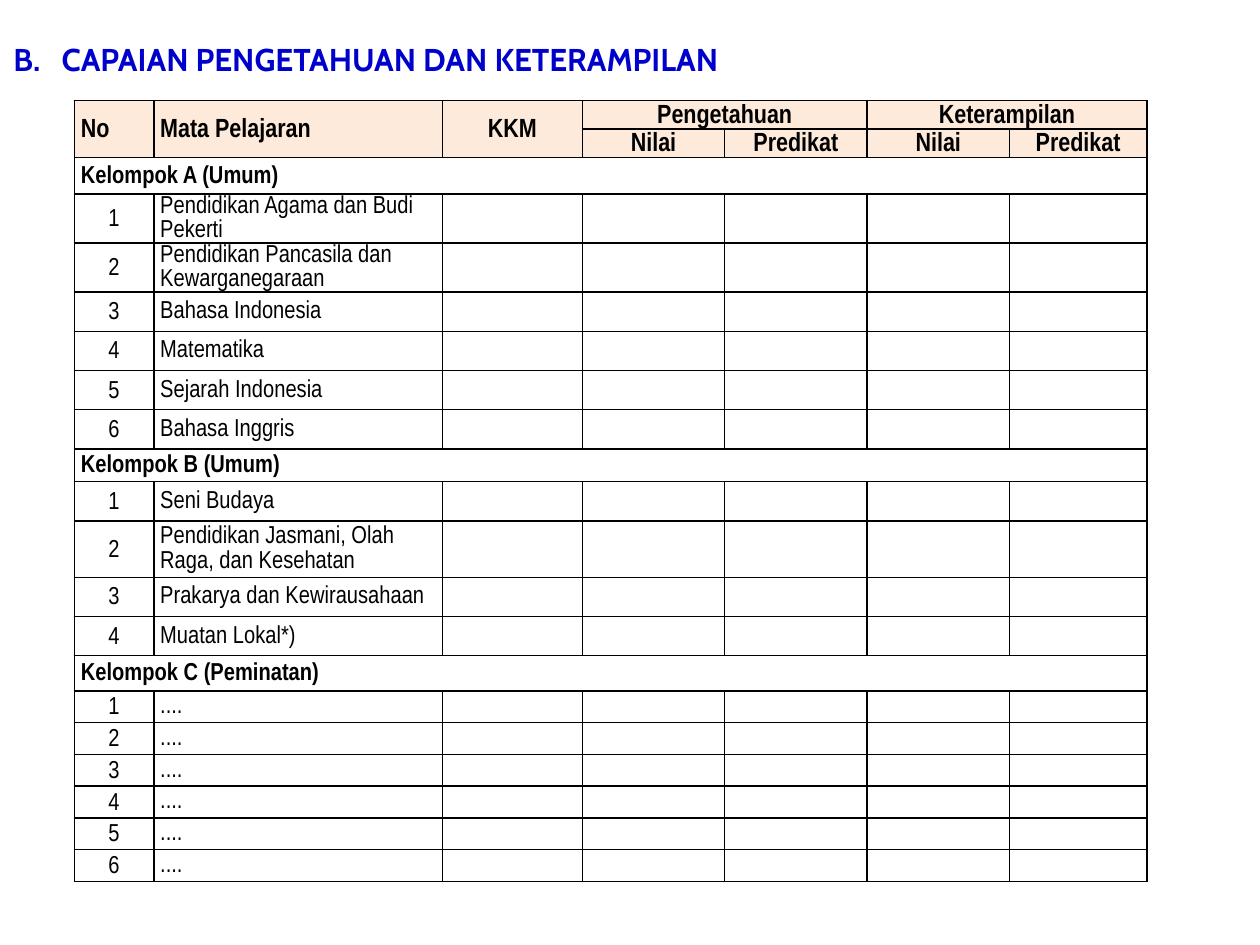
from lxml.etree import SubElement
from pptx import Presentation
from pptx.dml.color import RGBColor
from pptx.enum.shapes import MSO_SHAPE
from pptx.enum.text import MSO_ANCHOR, PP_ALIGN
from pptx.oxml.ns import qn
from pptx.util import Cm, Pt

BLACK = RGBColor(0x00, 0x00, 0x00)
BLUE = RGBColor(0x00, 0x00, 0xCC)
PEACH = RGBColor(0xFD, 0xEA, 0xDA)
FONT = "Arial Narrow"
TITLE_FONT = "Cabin"

COLUMNS = [1.6, 5.82, 2.82, 2.87, 2.87, 2.87, 2.77]
HEADER_HEIGHT = 0.43
ROW = 0.79
TALL_ROW = 1.14
SHORT_ROW = 0.64
HEADERS = [
    ["No", "Mata Pelajaran", "KKM", "Pengetahuan", "", "Keterampilan", ""],
    ["", "", "", "Nilai", "Predikat", "Nilai", "Predikat"],
]
GROUPS = [
    ("Kelompok A (Umum)", 0.74, 1.15, [
        ("Pendidikan Agama dan Budi Pekerti", ROW),
        ("Pendidikan Pancasila dan Kewarganegaraan", ROW),
        ("Bahasa Indonesia", ROW),
        ("Matematika", ROW),
        ("Sejarah Indonesia", ROW),
        ("Bahasa Inggris", ROW),
    ]),
    ("Kelompok B (Umum)", 0.66, Pt(14), [
        ("Seni Budaya", ROW),
        ("Pendidikan Jasmani, Olah Raga, dan Kesehatan", TALL_ROW),
        ("Prakarya dan Kewirausahaan", ROW),
        ("Muatan Lokal*)", ROW),
    ]),
    ("Kelompok C (Peminatan)", 0.71, Pt(14), [("....", SHORT_ROW)] * 6),
]


def format_run(r, font, size, color, bold):
    """Set the font of one run."""
    r.font.name = font
    r.font.size = Pt(size)
    r.font.color.rgb = color
    r.font.bold = bold


def add_borders(cell):
    """Draw a thin black line on each side of a cell."""
    tc_pr = cell._tc.get_or_add_tcPr()
    for index, side in enumerate(("a:lnL", "a:lnR", "a:lnT", "a:lnB")):
        ln = tc_pr.makeelement(qn(side), {"w": str(Pt(1))})
        fill = SubElement(ln, qn("a:solidFill"))
        SubElement(fill, qn("a:srgbClr"), {"val": str(BLACK)})
        tc_pr.insert(index, ln)


def style_cell(cell, fill=None):
    """Give a cell its margins, anchor, fill, borders and empty-line size."""
    cell.margin_left = cell.margin_right = Cm(0.13)
    cell.margin_top = cell.margin_bottom = 0
    cell.vertical_anchor = MSO_ANCHOR.MIDDLE
    if fill is None:
        cell.fill.background()
    else:
        cell.fill.solid()
        cell.fill.fore_color.rgb = fill
    add_borders(cell)
    p = cell.text_frame.paragraphs[0]
    SubElement(p._p, qn("a:endParaRPr"), {"sz": "1000"})


def write_cell(cell, text, size=14, bold=False, align=PP_ALIGN.LEFT, spacing=1.15):
    """Write one line of text in a cell."""
    p = cell.text_frame.paragraphs[0]
    p.text = text
    p.alignment = align
    p.line_spacing = spacing
    format_run(p.runs[0], FONT, size, BLACK, bold)


def add_title(s, left, top, width, height):
    """Add the section heading with its letter on a hanging indent."""
    sp = s.shapes.add_shape(MSO_SHAPE.ROUNDED_RECTANGLE, left, top, width, height)
    sp.shadow.inherit = False
    sp.fill.background()
    sp.line.fill.background()
    tf = sp.text_frame
    tf.word_wrap = True
    tf.vertical_anchor = MSO_ANCHOR.MIDDLE
    p = tf.paragraphs[0]
    p.text = "B.\tCAPAIAN PENGETAHUAN DAN KETERAMPILAN"
    p.alignment = PP_ALIGN.LEFT
    p_pr = p._p.get_or_add_pPr()
    p_pr.set("marL", str(Cm(0.97)))
    p_pr.set("indent", str(-Cm(0.97)))
    format_run(p.runs[0], TITLE_FONT, 18, BLUE, True)


def fill_header(table):
    """Merge and write the two header rows."""
    for col in range(3):
        table.cell(0, col).merge(table.cell(1, col))
    for col in (3, 5):
        table.cell(0, col).merge(table.cell(0, col + 1))
    for row, labels in enumerate(HEADERS):
        for col, label in enumerate(labels):
            if label:
                align = PP_ALIGN.LEFT if col < 2 else PP_ALIGN.CENTER
                write_cell(table.cell(row, col), label, 15, True, align)


def fill_groups(table, row):
    """Write each group heading and its numbered subjects."""
    for name, height, spacing, subjects in GROUPS:
        table.rows[row].height = Cm(height)
        table.cell(row, 0).merge(table.cell(row, len(COLUMNS) - 1))
        write_cell(table.cell(row, 0), name, bold=True, spacing=spacing)
        row += 1
        for number, (subject, subject_height) in enumerate(subjects, 1):
            table.rows[row].height = Cm(subject_height)
            write_cell(table.cell(row, 0), str(number), align=PP_ALIGN.CENTER)
            write_cell(table.cell(row, 1), subject, spacing=Pt(14))
            row += 1


def add_grades_table(s, left, top, width, height):
    """Add the table of subjects and grades."""
    rows = len(HEADERS) + sum(1 + len(subjects) for *_, subjects in GROUPS)
    frame = s.shapes.add_table(rows, len(COLUMNS), left, top, width, height)
    table = frame.table
    table.first_row = table.horz_banding = False
    for column, column_width in zip(table.columns, COLUMNS):
        column.width = Cm(column_width)
    for row in range(rows):
        for col in range(len(COLUMNS)):
            style_cell(table.cell(row, col), PEACH if row < len(HEADERS) else None)
    for row in range(len(HEADERS)):
        table.rows[row].height = Cm(HEADER_HEIGHT)
    fill_header(table)
    fill_groups(table, len(HEADERS))


def main():
    """Build and save the slide."""
    prs = Presentation()
    prs.slide_width, prs.slide_height = Cm(25.4), Cm(19.05)
    s = prs.slides.add_slide(prs.slide_layouts[6])
    add_title(s, Cm(-0.03), Cm(0.64), Cm(16.43), Cm(1.09))
    add_grades_table(s, Cm(1.5), Cm(2.03), Cm(sum(COLUMNS)), Cm(16.08))
    prs.save("out.pptx")


if __name__ == "__main__":
    main()
